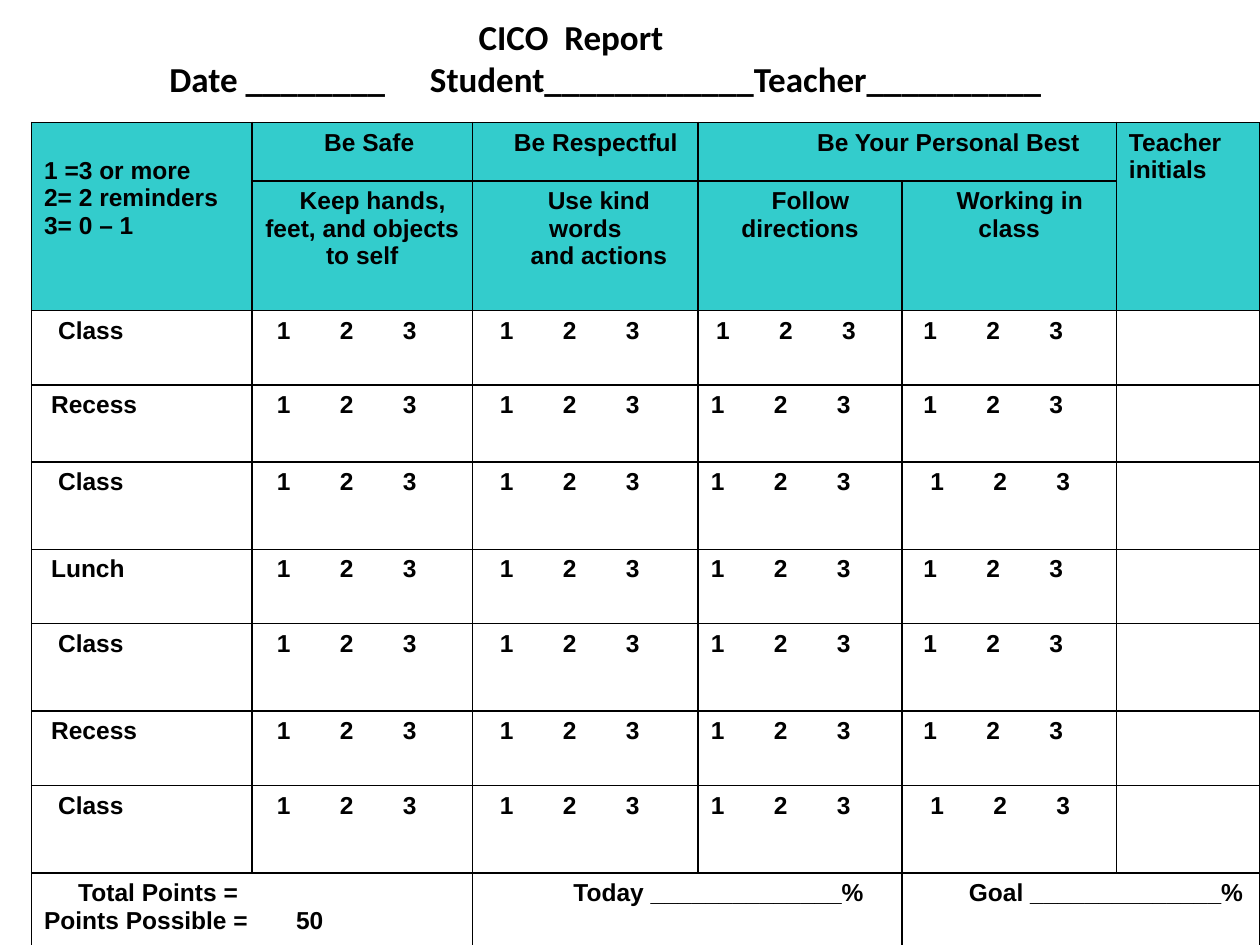
from pptx import Presentation
from pptx.dml.color import RGBColor
from pptx.enum.text import MSO_ANCHOR, MSO_AUTO_SIZE, PP_ALIGN
from pptx.oxml.ns import qn
from pptx.util import Pt
from lxml.etree import SubElement

COLORS = {"ink": "000000", "teal": "33CCCC"}
INK = RGBColor.from_string(COLORS["ink"])
TEAL = RGBColor.from_string(COLORS["teal"])
LEFT, MID = PP_ALIGN.LEFT, PP_ALIGN.CENTER


def style(par, face, size, align=LEFT, indent=0, tabs=()):
    """Set alignment, first-line indent, tab stops and font of a paragraph."""
    par.alignment = align
    props = par._p.get_or_add_pPr()
    props.set("marL", "0")
    props.set("indent", str(Pt(indent)))
    if tabs:
        stops = SubElement(props, qn("a:tabLst"))
        for tab in tabs:
            SubElement(stops, qn("a:tab"), pos=str(Pt(tab)), algn="l")
    par.font.name = face
    par.font.size = Pt(size)
    par.font.bold = True
    par.font.color.rgb = INK


def write(cell, text, align=LEFT, pad=0, indent=0, tabs=()):
    """Fill a cell with lines of text, moved right by pad."""
    cell.margin_left = Pt(7.2 + pad)
    cell.text_frame.text = text
    for par in cell.text_frame.paragraphs:
        style(par, "Arial", 14, align, indent, tabs)


deck = Presentation()
deck.slide_width, deck.slide_height = Pt(720), Pt(540)
slide = deck.slides.add_slide(deck.slide_layouts[5])

# Title
title = slide.shapes.title
title.left, title.top, title.width, title.height = Pt(22.5), Pt(-18.5), Pt(639.5), Pt(94)
frame = title.text_frame
frame.text = "CICO  Report\nDate ________\tStudent____________Teacher__________"
frame.auto_size = MSO_AUTO_SIZE.NONE
frame.vertical_anchor = MSO_ANCHOR.MIDDLE
frame.margin_top, frame.margin_right = Pt(12), Pt(39)
style(frame.paragraphs[0], "Calibri", 20, MID)
style(frame.paragraphs[1], "Calibri", 20, LEFT, 67, [208])

# Table grid
widths = [126, 126, 129, 116.5, 122.5, 82]
heights = [33.5, 74, 42.5, 44, 50, 42.5, 50, 42.5, 50, 45]
table = slide.shapes.add_table(len(heights), len(widths), Pt(18), Pt(70),
                               Pt(sum(widths)), Pt(sum(heights))).table
table.first_row = table.horz_banding = False
for col, width in zip(table.columns, widths):
    col.width = Pt(width)
for row, height in zip(table.rows, heights):
    row.height = Pt(height)

# Borders and fills
for r, row in enumerate(table.rows):
    for cell in row.cells:
        props = cell._tc.get_or_add_tcPr()
        for side in ("lnL", "lnR", "lnT", "lnB"):
            line = SubElement(props, qn("a:" + side), w=str(Pt(1)))
            fill = SubElement(line, qn("a:solidFill"))
            SubElement(fill, qn("a:srgbClr"), val=COLORS["ink"])
        if r < 2:
            cell.fill.solid()
            cell.fill.fore_color.rgb = TEAL
        else:
            cell.fill.background()

# Merged cells
for top, left, end, right in [(0, 0, 1, 0), (0, 3, 0, 4), (0, 5, 1, 5),
                              (9, 0, 9, 1), (9, 2, 9, 3), (9, 4, 9, 5)]:
    table.cell(top, left).merge(table.cell(end, right))

# Headings
scale = table.cell(0, 0)
write(scale, "1 =3 or more\n2= 2 reminders\n3= 0 – 1")
scale.margin_top = Pt(19.6)
write(table.cell(0, 5), "Teacher initials")
for c, text, pad in [(1, "Be Safe", 8), (2, "Be Respectful", 12),
                     (3, "Be Your Personal Best", 47)]:
    write(table.cell(0, c), text, MID, pad)
goals = [("Keep hands, feet, and objects to self", 12),
         ("Use kind words\nand actions", 15.5),
         ("Follow directions", 12), ("Working in class", 12)]
for c, (text, indent) in enumerate(goals, 1):
    write(table.cell(1, c), text, MID, indent=indent)

# Periods and scores
shift = {(2, 3): 3, (4, 4): 4, (8, 4): 4}
periods = ["Class", "Recess", "Class", "Lunch", "Class", "Recess", "Class"]
for r, name in enumerate(periods, 2):
    write(table.cell(r, 0), name, pad=8 if name == "Class" else 4)
    for c, pad in enumerate([7, 8.5, 0, 5], 1):
        write(table.cell(r, c), "1\t2\t3", pad=pad + shift.get((r, c), 0), tabs=[46.5, 89])

# Totals
total = table.cell(9, 0)
write(total, "Total Points =\t\nPoints Possible =\t50")
first, last = total.text_frame.paragraphs
style(first, "Arial", 14, LEFT, 19.5, [126, 215.5])
style(last, "Arial", 14, LEFT, 0, [163])
blank = first.add_run()
blank.text = "\t"
blank.font.underline = True
write(table.cell(9, 2), "Today ______________%", pad=50.5)
write(table.cell(9, 4), "Goal ______________%", pad=31)

deck.save("out.pptx")
